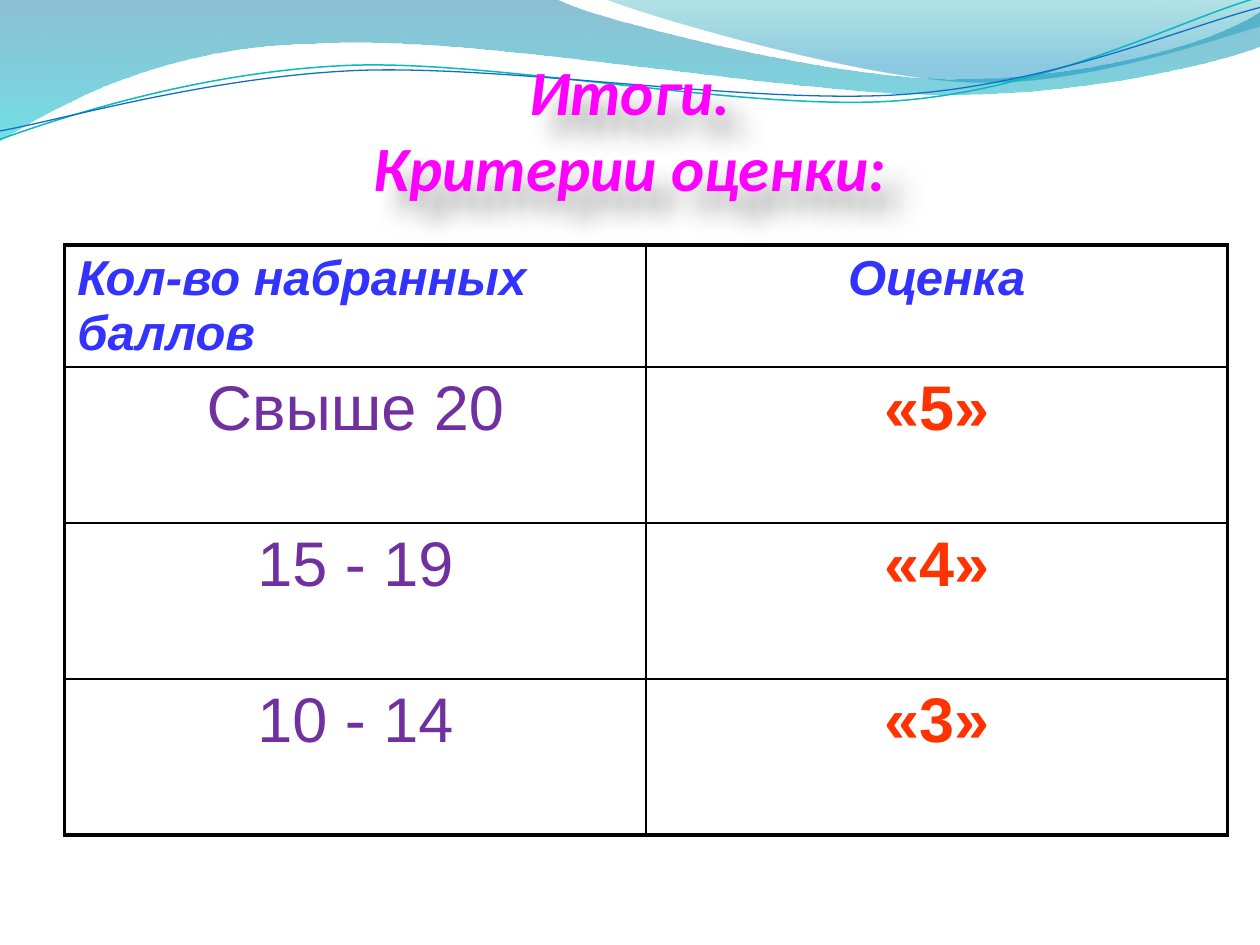
import pptx
import pptx.util
import pptx.dml.color
import pptx.enum.text
import pptx.oxml
import pptx.oxml.ns
from lxml import etree

Pt = pptx.util.Pt
RGB = pptx.dml.color.RGBColor
qn = pptx.oxml.ns.qn
CENTER = pptx.enum.text.PP_ALIGN.CENTER
LEFT = pptx.enum.text.PP_ALIGN.LEFT

STEEL, CYAN = RGB(0x00, 0x74, 0xA1), RGB(0x00, 0xC6, 0xCF)
TEAL, AZURE = RGB(0x00, 0xA1, 0xA9), RGB(0x00, 0x8B, 0xBF)
AQUA, BLUE = RGB(0x0A, 0xB8, 0xBF), RGB(0x0F, 0x6F, 0xC6)
PINK, INDIGO = RGB(0xFF, 0x00, 0xFF), RGB(0x33, 0x33, 0xFF)
PURPLE, RED = RGB(0x70, 0x30, 0xA0), RGB(0xFF, 0x33, 0x00)

prs = pptx.Presentation()
prs.slide_width, prs.slide_height = Pt(720), Pt(540)
slide = prs.slides.add_slide(prs.slide_layouts[5])
shapes = slide.shapes


def draw(start, steps, close):
    """Outline in points: a pair is a line, six numbers are a Bezier curve."""
    pen = shapes.build_freeform(Pt(start[0]), Pt(start[1]))
    pen.add_line_segments([(Pt(s[-2]), Pt(s[-1])) for s in steps], close=close)
    shape = pen.convert_to_shape()
    shape.shadow.inherit = False
    lines = list(shape._element.iter(qn("a:lnTo")))
    for line, step in zip(lines, steps):
        if len(step) == 6:
            curve = etree.Element(qn("a:cubicBezTo"))
            for x, y in zip(step[::2], step[1::2]):
                etree.SubElement(curve, qn("a:pt"), x=str(Pt(x) - shape.left),
                                 y=str(Pt(y) - shape.top))
            line.getparent().replace(line, curve)
    return shape


def style(font, name, size, color, bold, italic):
    font.name, font.size, font.color.rgb = name, Pt(size), color
    font.bold, font.italic = bold, italic


# Filled waves: start, steps, gradient stops (position, colour, opacity)
bands = [
    ((0, -1), [(317, -1), (343, 12, 478, 45, 546, 45),
               (614, 45, 690, 27, 720, 6.5), (721, 26),
               (708, 32, 626, 55, 537, 54), (447, 54, 275, 20, 185, 24.5),
               (93, 25, 33, 60, -1, 81)],
     [(0, STEEL, 45), (1, CYAN, 55)]),
    ((345, -1), [(366, 8, 491, 45, 554, 47), (616, 50, 692, 23, 720, 15),
                 (720, 0)],
     [(0, TEAL, 30), (0.8, AZURE, 45)]),
]
for start, steps, stops in bands:
    band = draw(start, steps, True)
    band.line.fill.background()
    band.fill.gradient()
    band.fill.gradient_angle = 270
    for stop, (place, color, alpha) in zip(band.fill.gradient_stops, stops):
        stop.position, stop.color.rgb = place, color
    tints = band._element.spPr.iter(qn("a:srgbClr"))
    for tint, (place, color, alpha) in zip(tints, stops):
        etree.SubElement(tint, qn("a:alpha"), val=str(alpha * 1000))

# Thin wave lines
waves = [
    ((-1, 80), [(35, 67, 114, 41, 199, 37.4), (284, 34, 427, 64, 513, 57.6),
                (600, 51, 675, 11, 719, -1.4)], AQUA, 0.85),
    ((-1, 75), [(34, 69, 118, 44, 204, 40.3), (290, 37, 430, 60, 516, 54),
                (602, 48, 678, 15, 720, 4.3)], BLUE, 0.75),
]
for start, steps, color, width in waves:
    wave = draw(start, steps, False)
    wave.fill.background()
    wave.line.color.rgb, wave.line.width = color, Pt(width)

# Title, in front of the waves
title = shapes.title
shapes._spTree.append(title._element)
title.left, title.top, title.width, title.height = Pt(36), Pt(36), Pt(648), Pt(80.6)
frame = title.text_frame
frame.text = "Итоги.\vКритерии оценки:"
frame.word_wrap = True
frame.auto_size = pptx.enum.text.MSO_AUTO_SIZE.NONE
frame.vertical_anchor = pptx.enum.text.MSO_ANCHOR.BOTTOM
frame.margin_left = frame.margin_right = frame.margin_bottom = 0
frame.margin_top = Pt(3.6)
frame.paragraphs[0].alignment = CENTER
for run in frame.paragraphs[0].runs:
    style(run.font, "Calibri", 36, PINK, True, True)
ns = pptx.oxml.ns.nsdecls("a")
title._element.spPr.append(pptx.oxml.parse_xml(
    f'<a:effectLst {ns}><a:outerShdw blurRad="{Pt(14)}" dist="{Pt(16)}" '
    'dir="2700000" algn="tl" rotWithShape="0"><a:srgbClr val="000000">'
    '<a:alpha val="35000"/></a:srgbClr></a:outerShdw></a:effectLst>'))

# Table of grades
rows = [("Кол-во набранных баллов", "Оценка"), ("Свыше 20", "«5»"),
        ("15 - 19", "«4»"), ("10 - 14", "«3»")]
last = len(rows) - 1
table = shapes.add_table(len(rows), 2, Pt(37), Pt(140), Pt(664.4), Pt(334)).table
table.first_row = table.horz_banding = False
for r, row in enumerate(rows):
    table.rows[r].height = Pt(89.2 if r else 66)
    for c, text in enumerate(row):
        cell = table.cell(r, c)
        cell.text_frame.text = text
        para = cell.text_frame.paragraphs[0]
        para.alignment = LEFT if r == c == 0 else CENTER
        font = para.runs[0].font
        if r == 0:
            style(font, "Arial", 28, INDIGO, True, True)
        else:
            style(font, "Arial", 36, RED if c else PURPLE, c == 1, False)
        outer = {"lnL": c == 0, "lnR": c == 1, "lnT": r == 0, "lnB": r == last}
        props = cell._tc.get_or_add_tcPr()
        for side, edge in outer.items():
            props.append(pptx.oxml.parse_xml(
                f'<a:{side} {ns} w="{Pt(2.25 if edge else 1)}"><a:solidFill>'
                f'<a:srgbClr val="000000"/></a:solidFill></a:{side}>'))
        cell.fill.background()

prs.save("out.pptx")
